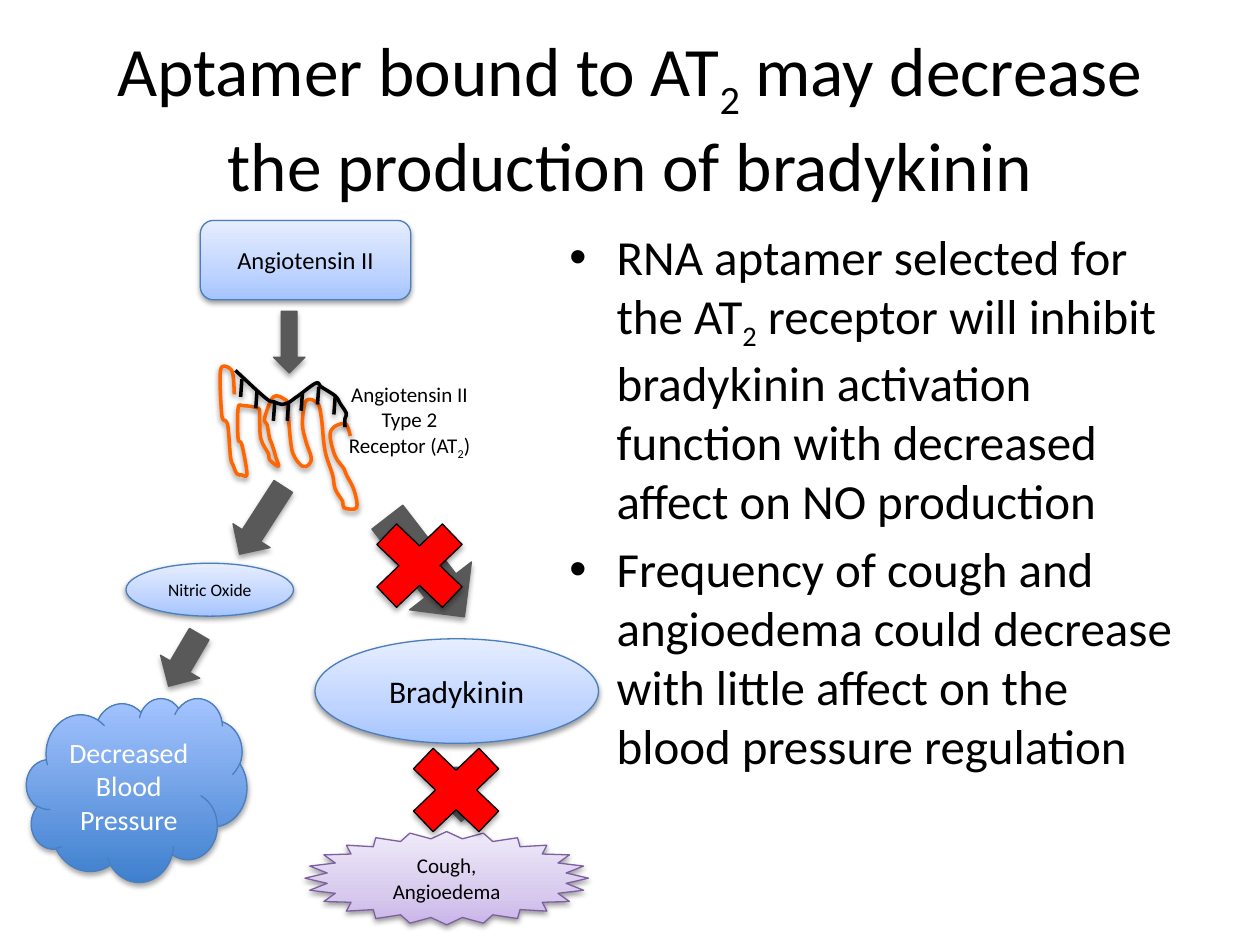
from dataclasses import dataclass
from math import cos, radians, sin

from lxml import etree
from pptx import Presentation
from pptx import util as u
from pptx.dml.color import RGBColor
from pptx.enum import shapes, text
from pptx.oxml.ns import qn

KIND = shapes.MSO_SHAPE
MID, TOP = text.MSO_ANCHOR.MIDDLE, text.MSO_ANCHOR.TOP
FONT = "Calibri"
COLS, ROWS = 100, 75  # grid cells of a tenth of an inch

deck = Presentation()
deck.slide_width, deck.slide_height = u.Inches(10), u.Inches(7.5)
slide = deck.slides.add_slide(deck.slide_layouts[6])

# Gradients run from the bottom up: (percent, colour)
BLUE = ((0, "A4C4FF"), (35, "BFD4FF"), (100, "E6EEFF"))
SKY = ((0, "3F80CE"), (100, "A4C4FF"))
LILAC = ((0, "C9B5E8"), (35, "D8CBEE"), (100, "F0EAF9"))
RIM, PLUM, GREY = "4B7EBC", "7D60A0", "595959"


@dataclass
class Node:
    kind: KIND
    box: tuple  # column, row, columns wide, rows high
    fill: object  # hex string or gradient stops
    edge: str
    words: str = ""
    size: float = 12
    ink: str = "000000"
    turn: float = 0
    adj: float | None = None


def col(n: float) -> int:
    return round(deck.slide_width * n / COLS)


def row(n: float) -> int:
    return round(deck.slide_height * n / ROWS)


def place(box: tuple) -> tuple:
    x, y, w, h = box
    return col(x), row(y), col(w), row(h)


def paint(fmt, tone: str) -> None:
    fmt.rgb = RGBColor.from_string(tone)


def add(parent, tag: str, **attrs):
    return etree.SubElement(parent, qn(tag), {k: str(v) for k, v in attrs.items()})


def shade(item, alpha: int, dist: float) -> None:
    """Soft shadow straight below; call after fill and line are set."""
    glow = add(add(item._element.spPr, "a:effectLst"), "a:outerShdw",
               blurRad=u.Pt(3.1), dist=u.Pt(dist), dir=5400000, rotWithShape=0)
    add(add(glow, "a:srgbClr", val="000000"), "a:alpha", val=alpha * 1000)


def stroke(item, tone: str, width: float) -> None:
    paint(item.line.color, tone)
    item.line.width = u.Pt(width)


def flood(item, fill) -> None:
    if isinstance(fill, str):
        item.fill.solid()
        paint(item.fill.fore_color, fill)
        return
    item.fill.gradient()
    item.fill.gradient_angle = 90
    stops = item._element.spPr.find(".//" + qn("a:gsLst"))
    for old in list(stops):
        stops.remove(old)
    for pos, tone in fill:
        add(add(stops, "a:gs", pos=pos * 1000), "a:srgbClr", val=tone)


def write(para, words: str, size: float, ink: str) -> None:
    """Parts between underscores become subscripts."""
    for i, part in enumerate(words.split("_")):
        run = para.add_run()
        run.text = part
        run.font.size, run.font.name = u.Pt(size), FONT
        paint(run.font.color, ink)
        if i % 2:
            run.font._element.set("baseline", "-25000")


def label(box: tuple, lines: list, size: float, anchor=TOP, bullet=False) -> None:
    frame = slide.shapes.add_textbox(*place(box)).text_frame
    frame.word_wrap, frame.vertical_anchor = True, anchor
    for i, words in enumerate(lines):
        para = frame.add_paragraph() if i else frame.paragraphs[0]
        para.alignment = text.PP_ALIGN.LEFT if bullet else text.PP_ALIGN.CENTER
        if i:
            para.space_before = u.Pt(size * 0.2)
        if bullet:
            props = para._p.get_or_add_pPr()
            props.set("marL", str(col(3.75)))
            props.set("indent", str(-col(3.75)))
            add(props, "a:buFont", typeface="Arial")
            add(props, "a:buChar", char="•")
        write(para, words, size, "000000")


def draw(node: Node) -> None:
    item = slide.shapes.add_shape(node.kind, *place(node.box))
    item.rotation = node.turn
    if node.adj is not None:
        item.adjustments[0] = node.adj
    flood(item, node.fill)
    stroke(item, node.edge, 0.75)
    if isinstance(node.fill, str) or node.fill is SKY:
        shade(item, 35, 1.8)
    else:
        shade(item, 38, 1.6)
    if node.words:
        frame = item.text_frame
        frame.word_wrap, frame.vertical_anchor = True, MID
        frame.paragraphs[0].alignment = text.PP_ALIGN.CENTER
        write(frame.paragraphs[0], node.words, node.size, node.ink)


def spin(spot: tuple, hub: tuple, turn: float) -> tuple:
    """Spot turned counter-clockwise about the hub."""
    dx, dy, a = spot[0] - hub[0], spot[1] - hub[1], radians(turn)
    return hub[0] + dx * cos(a) + dy * sin(a), hub[1] - dx * sin(a) + dy * cos(a)


def smooth(item) -> None:
    """Turn each straight piece of the outline into one Bezier curve."""
    spots = [(int(pt.get("x")), int(pt.get("y")))
             for pt in item._element.spPr.iter(qn("a:pt"))]
    ends = [spots[0], *spots, spots[-1]]
    pieces = list(item._element.spPr.iter(qn("a:lnTo")))
    for piece, a, b, c, d in zip(pieces, ends, ends[1:], ends[2:], ends[3:]):
        piece.tag = qn("a:cubicBezTo")
        piece.remove(piece[0])
        lead = [q + (r - p) / 6 for p, q, r in zip(a, b, c)]
        trail = [r - (s - q) / 6 for q, r, s in zip(b, c, d)]
        for x, y in (lead, trail, c):
            add(piece, "a:pt", x=round(x), y=round(y))


def strand(spots: list, tone: str, hub: tuple = (0, 0), turn: float = 0) -> None:
    """Smooth open curve through grid points."""
    flat = [(col(x), row(y)) for x, y in (spin(s, hub, turn) for s in spots)]
    pen = slide.shapes.build_freeform(*flat[0])
    pen.add_line_segments(flat[1:], close=False)
    item = pen.convert_to_shape()
    smooth(item)
    item.rotation = turn
    item.fill.background()
    stroke(item, tone, 2)
    shade(item, 38, 1.6)


def tick(x: float, y: float) -> None:
    """One base of the aptamer, hanging from its backbone."""
    item = slide.shapes.add_connector(
        shapes.MSO_CONNECTOR.STRAIGHT, col(x), row(y), col(x - 0.1), row(y + 1.4))
    stroke(item, "000000", 2)
    shade(item, 38, 1.6)


def arrow(box: tuple, turn: float = 0) -> Node:
    return Node(KIND.DOWN_ARROW, box, GREY, GREY, turn=turn)


def cross(x: float, y: float) -> Node:
    return Node(KIND.MATH_MULTIPLY, (x, y, 10, 9.6), "FF0000", "000000")


# Receptor outline and aptamer backbone
RECEPTOR = [
    (18.6, 31.3), (18.5, 29.8), (18.2, 29.2), (17.5, 29.4), (17.6, 32.9), (17.9, 33.4),
    (18.1, 33.9), (18.3, 36.3), (18.5, 36.9), (18.8, 37.6), (19.2, 37.7), (19.6, 37.6),
    (19.2, 35.3), (18.9, 34.8), (18.9, 32.4), (19.3, 32.2), (20.5, 32.4),
    (20.6, 32.9), (20.7, 34.8), (21.3, 36), (21.4, 36.5), (22.1, 37), (21.9, 36.3),
    (21.6, 35.3), (21.4, 34.8), (21.2, 33.7), (21, 33.2), (21.7, 31.5), (22.6, 31.7),
    (22.8, 32.2), (23.1, 35.3), (23.4, 36.3), (24, 37), (24.5, 36.9), (24.7, 36.3),
    (24.3, 35.1), (24, 33.6), (24.3, 31.8), (25.2, 32), (25.5, 33.1), (25.7, 35.1),
    (25.9, 36.2), (26.4, 37.7), (26.6, 38.8), (27.2, 39.8), (27.3, 40.3), (28.3, 40.3),
    (28.1, 38.9), (27.5, 37.7), (27.3, 37.2), (26.6, 36.2), (26.2, 34.6), (26.5, 33.9),
    (27.3, 33.6), (27.6, 33.9), (27.8, 34.6)]
APTAMER = [
    (27.3, 33.9), (27.3, 33.2), (27.4, 32.8), (26.9, 32), (26.5, 31.4), (25.4, 30.7),
    (25, 30.4), (23.6, 31.4), (23.3, 31.6), (22.9, 31.9), (22.3, 32.1), (21.7, 31.9),
    (21, 31.6), (18.6, 29.4)]
BASES = [(25.3, 30.7), (24, 31.2), (21.8, 32), (22.9, 32), (20.4, 31), (19.2, 30.1),
         (26.6, 31.5)]

# Pathway, from back to front
PATHWAY = [
    Node(KIND.CLOUD, (2.1, 55.4, 17.5, 14.6), SKY, RIM, "Decreased Blood Pressure", 16, "FFFFFF"),
    Node(KIND.STAR_24_POINT, (24.2, 66, 22.5, 7.4), LILAC, PLUM, "Cough, Angioedema", adj=0.425),
    arrow((35.5, 60.9, 2.2, 4.3)),
    Node(KIND.OVAL, (10, 44.7, 13.3, 4.2), BLUE, RIM, "Nitric Oxide", 10),
    arrow((19, 38.1, 3.5, 6.4), 32.8),
    arrow((30.7, 40, 6.2, 10), 322.3),
    arrow((12.8, 50, 3.6, 4.8), 30.4),
    Node(KIND.OVAL, (25, 50.7, 22.5, 8.3), BLUE, RIM, "Bradykinin", 18),
]

# Title and bullets
label((5, 3, 90, 12.5),
      ["Aptamer bound to AT_2_ may decrease the production of bradykinin"], 39.6, MID)
label((44.2, 17.5, 50.8, 52.5), [
    "RNA aptamer selected for the AT_2_ receptor will inhibit bradykinin activation "
    "function with decreased affect on NO production",
    "Frequency of cough and angioedema could decrease with little affect on the "
    "blood pressure regulation"], 28, bullet=True)

# Diagram
draw(Node(KIND.ROUNDED_RECTANGLE, (15.9, 17.5, 16.7, 6.3), BLUE, RIM, "Angiotensin II", 14))
draw(arrow((21.7, 24.7, 2.5, 4.9)))
strand(RECEPTOR, "FF6600")
label((26.6, 29.8, 11.8, 7.1), ["Angiotensin II Type 2 Receptor (AT_2_)"], 12)
for part in PATHWAY:
    draw(part)
strand(APTAMER, "000000", (23.4, 31.15), 130.3)
for base in BASES:
    tick(*base)
for mark in (cross(28.3, 40.1), cross(31.2, 57.9)):
    draw(mark)

deck.save("out.pptx")
